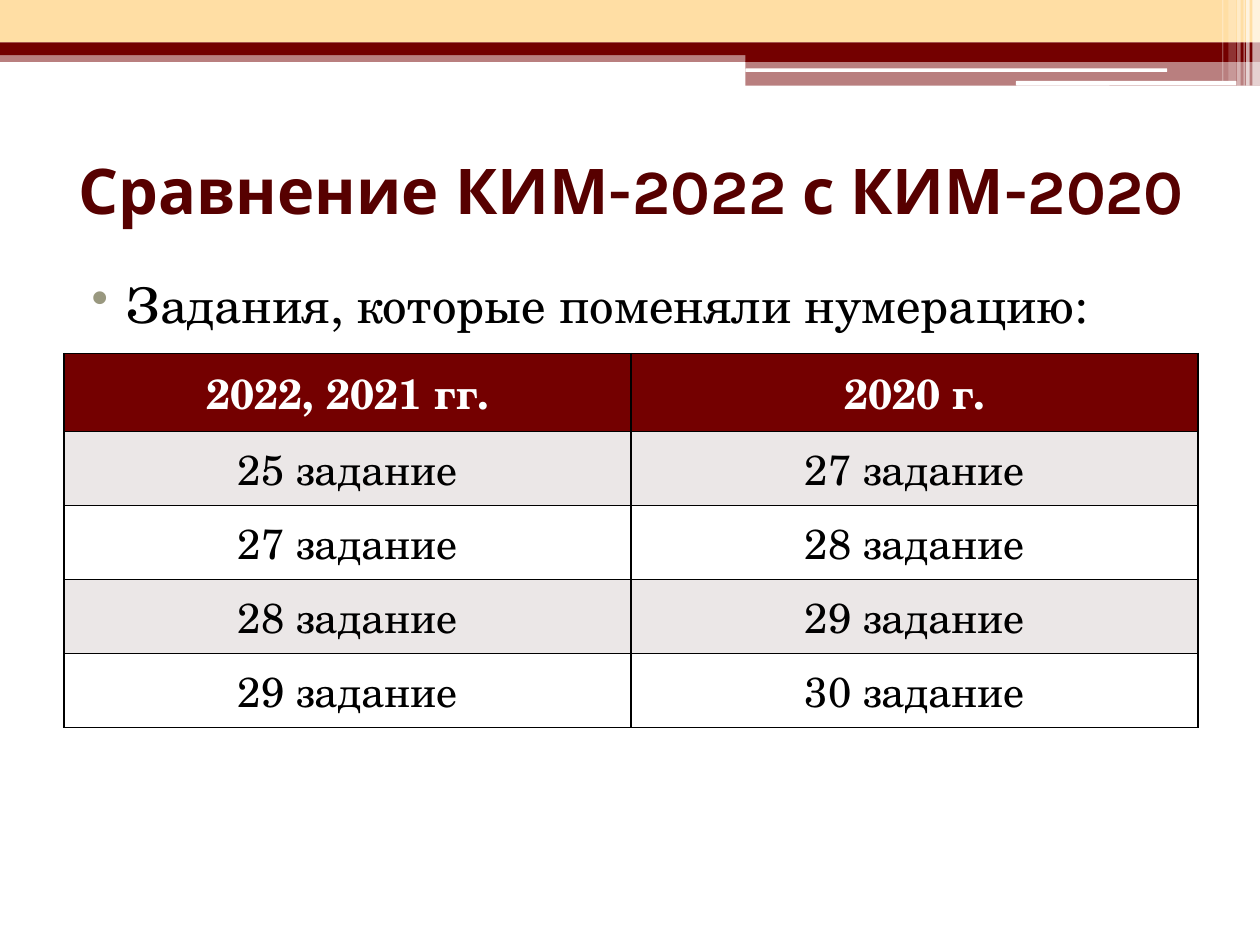
from dataclasses import dataclass

from lxml import etree
from pptx import Presentation
from pptx.dml.color import RGBColor
from pptx.enum import shapes, text
from pptx.oxml import ns
from pptx.util import Pt


@dataclass(frozen=True)
class Theme:
    maroon: str = "740000"
    title: str = "570000"
    sand: str = "FFDEA4"
    bullet: str = "99987F"
    stripe: str = "EBE7E7"
    white: str = "FFFFFF"
    black: str = "000000"
    head_font: str = "Karla"
    body_font: str = "TeX Gyre Schola"
    title_size: int = 36
    body_size: int = 28
    table_size: int = 24


T = Theme()
RECT = shapes.MSO_SHAPE.RECTANGLE
ROUND = shapes.MSO_SHAPE.ROUNDED_RECTANGLE


def add_xml(parent, tag, **attrs):
    return etree.SubElement(parent, ns.qn(tag), attrs)


def style(p, font, size, color, bold=False):
    p.font.name = font
    p.font.size = Pt(size)
    p.font.bold = bold
    p.font.color.rgb = RGBColor.from_string(color)


def add_bar(s, box, color, opacity=100, kind=RECT):
    sp = s.shapes.add_shape(kind, *map(Pt, box))
    sp.shadow.inherit = False
    sp.line.fill.background()
    sp.fill.solid()
    sp.fill.fore_color.rgb = RGBColor.from_string(color)
    if opacity < 100:
        clr = sp.fill._xPr.find(".//" + ns.qn("a:srgbClr"))
        add_xml(clr, "a:alpha", val=str(opacity * 1000))


def add_text(s, box, content):
    tf = s.shapes.add_textbox(*map(Pt, box)).text_frame
    tf.word_wrap = True
    p = tf.paragraphs[0]
    p.text = content
    return tf, p


def add_banner(s, x, y, w, h):
    step = x + 426
    right = x + w
    add_bar(s, (x, y + 28.8, w, 6.6), T.maroon, 50)
    add_bar(s, (x, y, w, 24.3), T.sand)
    add_bar(s, (x, y + 24.3, w, 7.2), T.maroon)
    add_bar(s, (step, y + 28.2, right - step, 7.2), T.maroon)
    add_bar(s, (step, y + 34.8, right - step, h - 34.8), T.maroon, 50)
    add_bar(s, (step, y + 39.1, 241, 2), T.white, kind=ROUND)
    add_bar(s, (x + 580.5, y + 46.3, 126, 2.6), T.white, kind=ROUND)
    glints = [
        (4.3, 4.3, h, 65),
        (7.9, 2, h, 65),
        (9.4, 0.7, h, 60),
        (13, 2, h, 40),
        (18, 4.3, h - 2.6, 20),
        (21.6, 0.7, h - 2.6, 30),
    ]
    for offset, width, height, opacity in glints:
        add_bar(s, (right - offset, y, width, height), T.white, opacity)


def add_title(s, box, content):
    tf, p = add_text(s, box, content)
    tf.vertical_anchor = text.MSO_ANCHOR.MIDDLE
    p.alignment = text.PP_ALIGN.CENTER
    style(p, T.head_font, T.title_size, T.title, True)


def add_body(s, box, content):
    tf, p = add_text(s, box, content)
    p.alignment = text.PP_ALIGN.JUSTIFY
    p.space_before = Pt(3)
    style(p, T.body_font, T.body_size, T.black)
    props = p._p.get_or_add_pPr()
    props.set("marL", str(Pt(28.8)))
    props.set("indent", str(-Pt(20.2)))
    bullet_color = etree.Element(ns.qn("a:buClr"))
    add_xml(bullet_color, "a:srgbClr", val=T.bullet)
    bullet = etree.Element(ns.qn("a:buChar"), char="•")
    defaults = props.find(ns.qn("a:defRPr"))
    defaults.addprevious(bullet_color)
    defaults.addprevious(bullet)


def add_borders(cell):
    props = cell._tc.get_or_add_tcPr()
    for side in "LRTB":
        line = add_xml(props, f"a:ln{side}", w=str(Pt(1)))
        fill = add_xml(line, "a:solidFill")
        add_xml(fill, "a:srgbClr", val=T.black)


def add_comparison(s, box, rows):
    x, y, w, h = box
    head_h = 44.6
    row_h = (h - head_h) / (len(rows) - 1)
    frame = s.shapes.add_table(len(rows), len(rows[0]), *map(Pt, box))
    table = frame.table
    for col in table.columns:
        col.width = Pt(w / len(rows[0]))
    for i, values in enumerate(rows):
        is_head = i == 0
        table.rows[i].height = Pt(head_h if is_head else row_h)
        fill = T.maroon if is_head else T.stripe if i % 2 else T.white
        color = T.white if is_head else T.black
        for j, value in enumerate(values):
            cell = table.cell(i, j)
            add_borders(cell)
            cell.fill.solid()
            cell.fill.fore_color.rgb = RGBColor.from_string(fill)
            cell.vertical_anchor = text.MSO_ANCHOR.MIDDLE
            p = cell.text_frame.paragraphs[0]
            p.text = value
            p.alignment = text.PP_ALIGN.CENTER
            style(p, T.body_font, T.table_size, color, is_head)


def main():
    prs = Presentation()
    prs.slide_width, prs.slide_height = Pt(720), Pt(540)
    s = prs.slides.add_slide(prs.slide_layouts[6])
    left, width = 36.7, 648
    numbering = [(25, 27), (27, 28), (28, 29), (29, 30)]
    rows = [("2022, 2021 гг.", "2020 г.")]
    rows += [tuple(f"{n} задание" for n in pair) for pair in numbering]
    add_banner(s, 0, 0, 720, 49)
    add_title(s, (left, 66.2, width, 84.2), "Сравнение КИМ-2022 с КИМ-2020")
    add_body(s, (left, 153.4, width, 340.6), "Задания, которые поменяли нумерацию:")
    add_comparison(s, (left, 202, width, 213.8), rows)
    prs.save("out.pptx")


if __name__ == "__main__":
    main()
